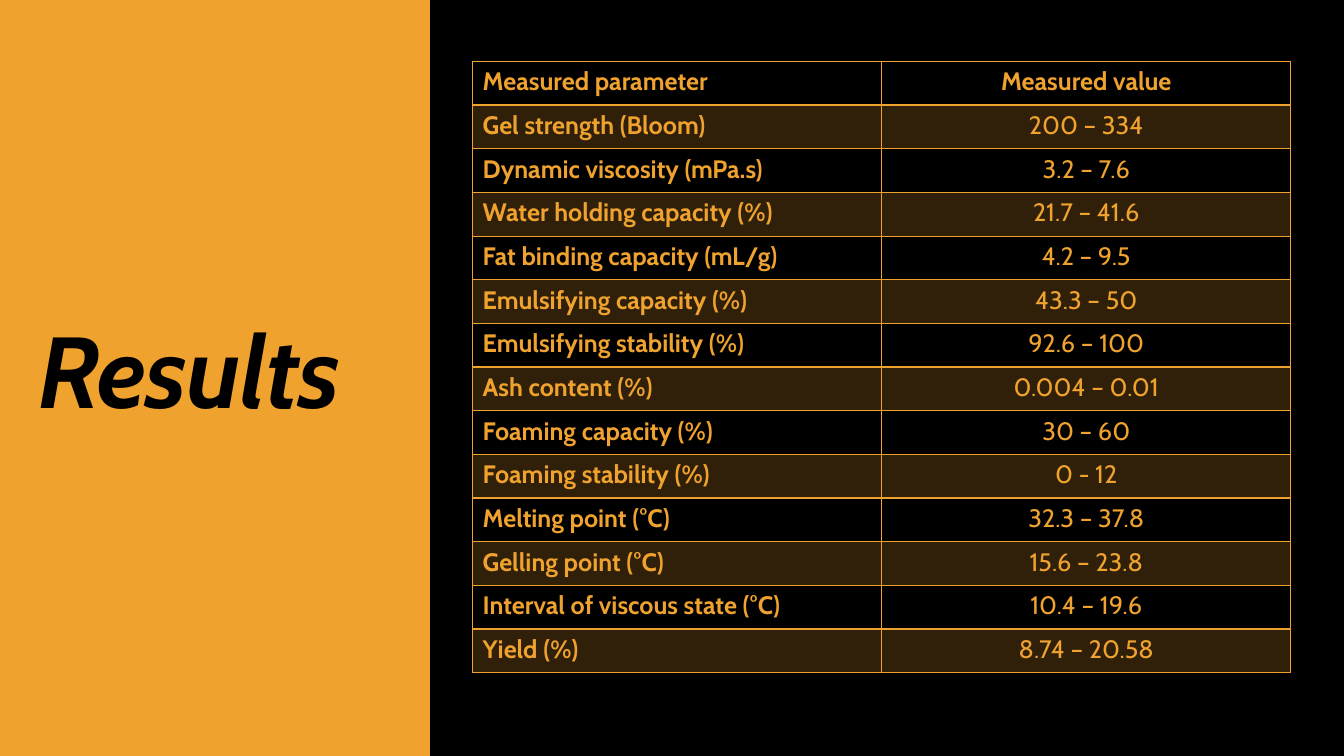
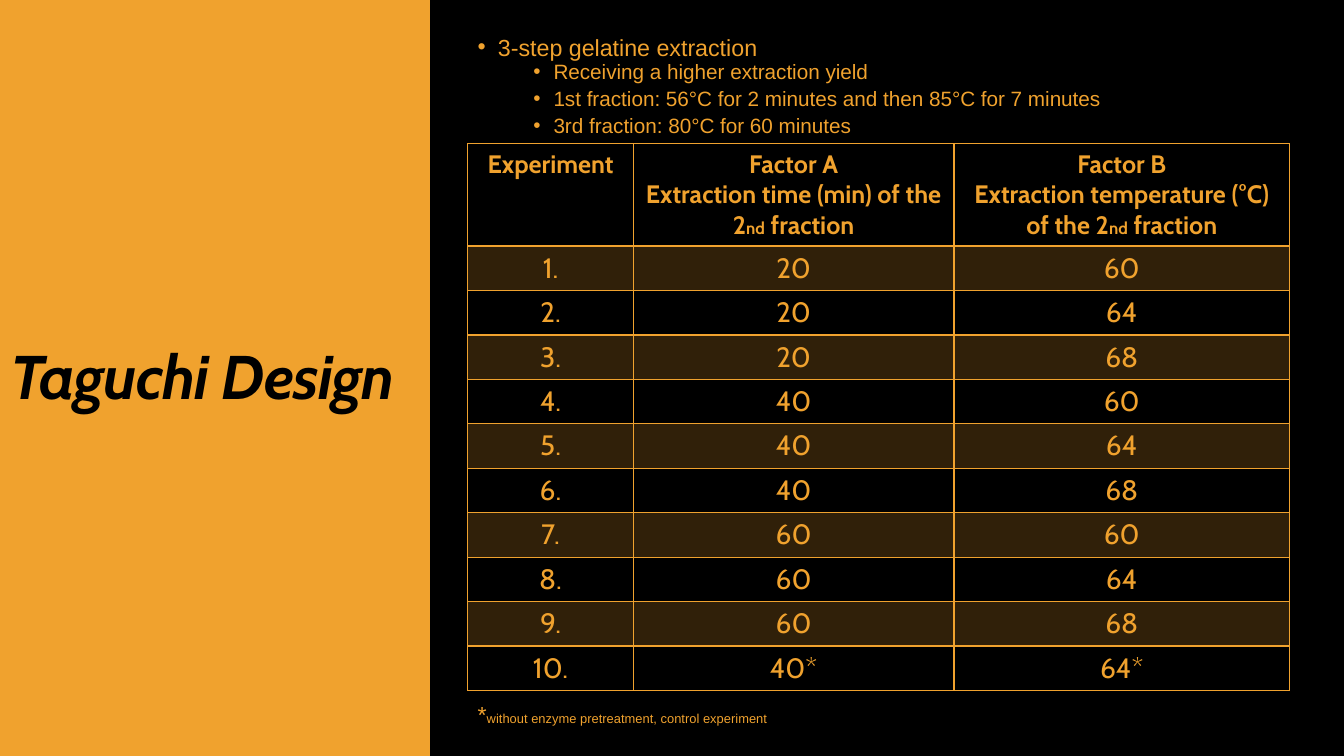
from itertools import product

from lxml import etree
from pptx import Presentation
from pptx.dml.color import RGBColor
from pptx.enum.text import MSO_ANCHOR, MSO_AUTO_SIZE, PP_ALIGN
from pptx.oxml.ns import qn
from pptx.util import Cm, Pt

# Shared look
BLACK, AMBER = "000000", "F0A22E"
HEADING_FONT, BODY_FONT = "Cabin", "Arial"
BAND_EDGE = 0.68  # share of the slide width, measured from the right
TITLE_ONLY = 5

RESULTS = [
    ("Gel strength (Bloom)", "200 – 334"),
    ("Dynamic viscosity (mPa.s)", "3.2 – 7.6"),
    ("Water holding capacity (%)", "21.7 – 41.6"),
    ("Fat binding capacity (mL/g)", "4.2 – 9.5"),
    ("Emulsifying capacity (%)", "43.3 – 50"),
    ("Emulsifying stability (%)", "92.6 – 100"),
    ("Ash content (%)", "0.004 – 0.01"),
    ("Foaming capacity (%)", "30 – 60"),
    ("Foaming stability (%)", "0 - 12"),
    ("Melting point (°C)", "32.3 – 37.8"),
    ("Gelling point (°C)", "15.6 – 23.8"),
    ("Interval of viscous state (°C)", "10.4 – 19.6"),
    ("Yield (%)", "8.74 – 20.58"),
]
EXTRACTION_STEPS = [
    "Receiving a higher extraction yield",
    "1st fraction: 56°C for 2 minutes and then 85°C for 7 minutes",
    "3rd fraction: 80°C for 60 minutes",
]


def color(value):
    return RGBColor.from_string(value)


def add_xml(parent, tag, **attributes):
    return etree.SubElement(parent, qn(tag), attributes)


def set_font(font, name, size, bold=False, italic=False, ink=AMBER):
    font.name, font.size = name, Pt(size)
    font.bold, font.italic = bold, italic
    font.color.rgb = color(ink)


def add_runs(paragraph, runs):
    """Each run is a text, or a pair of text and size."""
    for item in runs:
        text, size = item if isinstance(item, tuple) else (item, None)
        run = paragraph.add_run()
        run.text = text
        if size:
            run.font.size = Pt(size)


# Background and title
def paint_background(master):
    """Black on the right, an amber band on the left, with a hard edge."""
    fill = master.background.fill
    fill.gradient()
    fill.gradient_angle = 180
    for stop, ink in zip(fill.gradient_stops, (BLACK, AMBER)):
        stop.color.rgb = color(ink)
        stop.position = BAND_EDGE


def add_titled_slide(presentation, text, size, left, top, width, height):
    slide = presentation.slides.add_slide(presentation.slide_layouts[TITLE_ONLY])
    title = slide.shapes.title
    title.left, title.top, title.width, title.height = map(
        Cm, (left, top, width, height))
    frame = title.text_frame
    frame.text = text
    frame.word_wrap = True
    frame.auto_size = MSO_AUTO_SIZE.NONE
    frame.vertical_anchor = MSO_ANCHOR.MIDDLE
    paragraph = frame.paragraphs[0]
    paragraph.alignment = PP_ALIGN.LEFT
    paragraph.line_spacing = 0.9
    set_font(paragraph.font, HEADING_FONT, size, True, True, BLACK)
    paragraph.runs[0]._r.get_or_add_rPr().set("spc", "-60")
    return slide


# Text
def add_text_frame(slide, left, top, width, height):
    box = slide.shapes.add_textbox(*map(Cm, (left, top, width, height)))
    box.text_frame.word_wrap = True
    return box.text_frame


def format_bullet(paragraph, text, size, margin, gap=0):
    properties = paragraph._p.get_or_add_pPr()
    properties.set("marL", str(Cm(margin)))
    properties.set("indent", str(Cm(-0.51)))
    add_xml(add_xml(properties, "a:buClr"), "a:srgbClr", val=AMBER)
    add_xml(properties, "a:buFont", typeface=BODY_FONT)
    add_xml(properties, "a:buChar", char="•")
    paragraph.line_spacing = 0.8
    paragraph.space_before = paragraph.space_after = Pt(gap)
    set_font(paragraph.font, BODY_FONT, size)
    add_runs(paragraph, [text])


# Tables
def set_borders(cell, row_index):
    properties = cell._tc.get_or_add_tcPr()
    heavy_side = {0: "B", 1: "T"}.get(row_index)
    for side in "LRTB":
        width = Pt(2 if side == heavy_side else 1)
        line = add_xml(properties, f"a:ln{side}", w=str(width))
        add_xml(add_xml(line, "a:solidFill"), "a:srgbClr", val=AMBER)


def set_fill(cell, shaded):
    if not shaded:
        cell.fill.background()
        return
    cell.fill.solid()
    cell.fill.fore_color.rgb = color(AMBER)
    tint = cell._tc.tcPr.find(qn("a:solidFill")).find(qn("a:srgbClr"))
    add_xml(tint, "a:alpha", val="20000")


def fill_cell(cell, content, size, bold, alignment):
    """Content is a text, or a list of paragraphs that are lists of runs."""
    lines = [[content]] if isinstance(content, str) else content
    frame = cell.text_frame
    for index, runs in enumerate(lines):
        paragraph = frame.add_paragraph() if index else frame.paragraphs[0]
        paragraph.alignment = alignment
        set_font(paragraph.font, HEADING_FONT, size, bold)
        add_runs(paragraph, runs)


def add_data_table(slide, rows, left, top, widths, header_height, row_height,
                   body_size, label_column=False):
    heights = [header_height] + [row_height] * (len(rows) - 1)
    table = slide.shapes.add_table(
        len(rows), len(widths), Cm(left), Cm(top),
        Cm(sum(widths)), Cm(sum(heights))).table
    table.first_row = table.horz_banding = False
    for column, width in zip(table.columns, widths):
        column.width = Cm(width)
    for row, height in zip(table.rows, heights):
        row.height = Cm(height)
    for row_index, contents in enumerate(rows):
        for column_index, content in enumerate(contents):
            cell = table.cell(row_index, column_index)
            is_header = row_index == 0
            is_label = label_column and column_index == 0
            set_borders(cell, row_index)
            set_fill(cell, row_index % 2 == 1)
            fill_cell(cell, content, 18 if is_header else body_size,
                      is_header or is_label,
                      PP_ALIGN.LEFT if is_label else PP_ALIGN.CENTER)


# Slides
def add_results_slide(presentation):
    slide = add_titled_slide(presentation, "Results", 72, 0.71, 3.02, 9.1, 12.88)
    rows = [("Measured parameter", "Measured value")] + RESULTS
    add_data_table(slide, rows, 11.91, 1.55, [10.31, 10.31], 1.1, 1.1, 18,
                   label_column=True)


def add_design_slide(presentation):
    slide = add_titled_slide(presentation, "Taguchi Design", 44,
                             0, 3.18, 10.57, 12.78)

    frame = add_text_frame(slide, 11.79, 0.84, 21.56, 2.75)
    format_bullet(frame.paragraphs[0], "3-step gelatine extraction", 16.6, 0.51)
    for step in EXTRACTION_STEPS:
        format_bullet(frame.add_paragraph(), step, 14.8, 1.91, 2.5)

    fraction = [("nd", 12), " fraction"]
    header = (
        "Experiment",
        [["Factor A"], ["Extraction time (min) of the 2", *fraction]],
        [["Factor B"], ["Extraction temperature (°C) of the 2", *fraction]],
    )
    settings = list(product(("20", "40", "60"), ("60", "64", "68")))
    settings.append(("40*", "64*"))
    rows = [header] + [(f"{number}.", minutes, degrees) for number,
                       (minutes, degrees) in enumerate(settings, 1)]
    add_data_table(slide, rows, 11.79, 3.62, [4.17, 8.08, 8.46], 2.58, 1.12, 20)

    footnote = add_text_frame(slide, 11.79, 17.66, 20.7, 0.8).paragraphs[0]
    footnote.line_spacing = 0.8
    set_font(footnote.font, BODY_FONT, 9.2)
    add_runs(footnote, [("*", 16.6),
                        "without enzyme pretreatment, control experiment"])


def main():
    presentation = Presentation()
    presentation.slide_width, presentation.slide_height = Cm(33.87), Cm(19.05)
    paint_background(presentation.slide_master)
    add_results_slide(presentation)
    add_design_slide(presentation)
    presentation.save("out.pptx")


if __name__ == "__main__":
    main()
